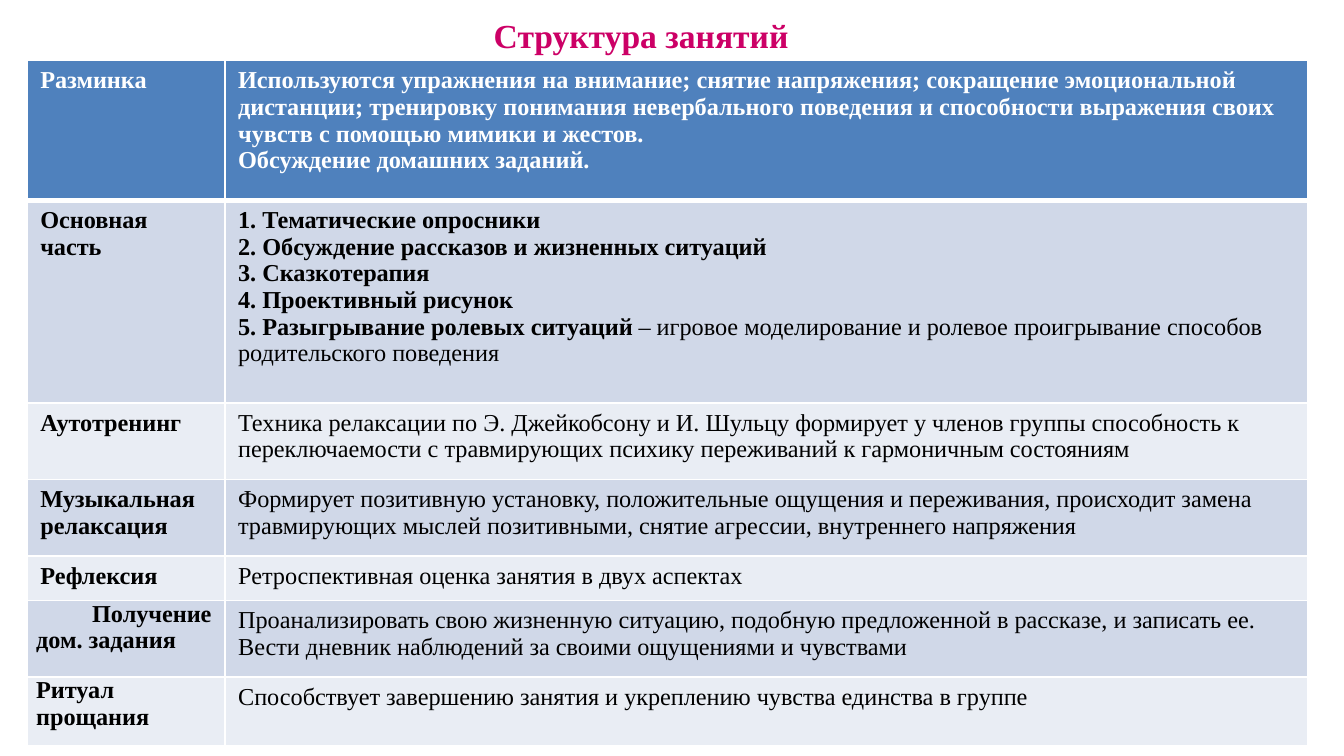
"""Build a slide with a table describing the structure of the sessions."""
import pptx
import pptx.dml.color
import pptx.enum.text
import pptx.oxml
import pptx.oxml.ns
import pptx.util

Pt = pptx.util.Pt
ALIGN = pptx.enum.text.PP_ALIGN
FONT = "Times New Roman"
COLORS = {
    "title": "CC0066", "header": "4F81BD", "odd": "D0D8E8",
    "even": "E9EDF4", "white": "FFFFFF", "text": "000000",
}
TITLE = "Структура занятий"
COLUMN_WIDTHS = (106, 580)
ROW_HEIGHTS = (75, 108.5, 41, 41, 24, 41, 36.5)
WIDE_MARGINS = (7.2, 3.6)
TIGHT_MARGINS = (5, 0)
JUSTIFIED_INDENTS = {"Получение дом. задания": 30, "Ритуал прощания": 0}
STAGES = [
    ("Разминка", [
        [("Используются упражнения на внимание; снятие напряжения; сокращение "
          "эмоциональной дистанции; тренировку понимания невербального поведения "
          "и способности выражения своих чувств с помощью мимики и жестов.", True)],
        [("Обсуждение домашних заданий.", True)],
    ]),
    ("Основная часть", [
        [("1. Тематические опросники", True)],
        [("2. Обсуждение рассказов и жизненных ситуаций", True)],
        [("3. Сказкотерапия", True)],
        [("4. Проективный рисунок", True)],
        [("5. Разыгрывание ролевых ситуаций ", True),
         ("– игровое моделирование и ролевое проигрывание способов "
          "родительского поведения", False)],
    ]),
    ("Аутотренинг", [
        [("Техника релаксации по Э. Джейкобсону и И. Шульцу формирует у членов "
          "группы способность к переключаемости с травмирующих психику "
          "переживаний к гармоничным состояниям", False)],
    ]),
    ("Музыкальная релаксация", [
        [("Формирует позитивную установку, положительные ощущения и переживания, "
          "происходит замена травмирующих мыслей позитивными, снятие агрессии, "
          "внутреннего напряжения", False)],
    ]),
    ("Рефлексия", [
        [("Ретроспективная оценка занятия в двух аспектах", False)],
    ]),
    ("Получение дом. задания", [
        [("Проанализировать свою жизненную ситуацию, подобную предложенной в "
          "рассказе, и записать ее. Вести дневник наблюдений за своими "
          "ощущениями и чувствами", False)],
    ]),
    ("Ритуал прощания", [
        [("Способствует завершению занятия и укреплению чувства единства "
          "в группе", False)],
    ]),
]


def rgb(name):
    return pptx.dml.color.RGBColor.from_string(COLORS[name])


def write_paragraphs(text_frame, paragraphs, size, color):
    for index, runs in enumerate(paragraphs):
        paragraph = text_frame.add_paragraph() if index else text_frame.paragraphs[0]
        for text, bold in runs:
            run = paragraph.add_run()
            run.text = text
            run.font.name = FONT
            run.font.size = Pt(size)
            run.font.bold = bold
            run.font.color.rgb = rgb(color)


def set_margins(frame, horizontal, vertical):
    frame.margin_left = frame.margin_right = Pt(horizontal)
    frame.margin_top = frame.margin_bottom = Pt(vertical)


def add_borders(cell, top, bottom):
    properties = cell._tc.get_or_add_tcPr()
    for side, width in (("L", 1), ("R", 1), ("T", top), ("B", bottom)):
        properties.append(pptx.oxml.parse_xml(
            f'<a:ln{side} {pptx.oxml.ns.nsdecls("a")} w="{Pt(width)}"><a:solidFill>'
            f'<a:srgbClr val="{COLORS["white"]}"/></a:solidFill></a:ln{side}>'))


def add_title(slide):
    box = slide.shapes.add_textbox(Pt(19.5), Pt(10), Pt(648), Pt(17.5))
    frame = box.text_frame
    frame.word_wrap = True
    frame.vertical_anchor = pptx.enum.text.MSO_ANCHOR.MIDDLE
    set_margins(frame, *WIDE_MARGINS)
    write_paragraphs(frame, [[(TITLE, True)]], 18, "title")
    frame.paragraphs[0].alignment = ALIGN.CENTER


def add_stage_table(slide):
    table = slide.shapes.add_table(
        len(STAGES), len(COLUMN_WIDTHS), Pt(14.4), Pt(32.4),
        Pt(sum(COLUMN_WIDTHS)), Pt(sum(ROW_HEIGHTS))).table
    for column, width in zip(table.columns, COLUMN_WIDTHS):
        column.width = Pt(width)
    for index, (name, description) in enumerate(STAGES):
        table.rows[index].height = Pt(ROW_HEIGHTS[index])
        fill = "header" if index == 0 else "odd" if index % 2 else "even"
        color = "text" if index else "white"
        for column, paragraphs in enumerate(([[(name, True)]], description)):
            cell = table.cell(index, column)
            add_borders(cell, 3 if index == 1 else 1, 1 if index else 3)
            cell.fill.solid()
            cell.fill.fore_color.rgb = rgb(fill)
            set_margins(cell, *WIDE_MARGINS)
            write_paragraphs(cell.text_frame, paragraphs, 13, color)
        if name in JUSTIFIED_INDENTS:
            cell = table.cell(index, 0)
            set_margins(cell, *TIGHT_MARGINS)
            paragraph = cell.text_frame.paragraphs[0]
            paragraph.alignment = ALIGN.JUSTIFY
            paragraph._p.get_or_add_pPr().set("indent", str(Pt(JUSTIFIED_INDENTS[name])))


def main():
    presentation = pptx.Presentation()
    presentation.slide_width = Pt(720)
    presentation.slide_height = Pt(405)
    slide = presentation.slides.add_slide(presentation.slide_layouts[6])
    add_title(slide)
    add_stage_table(slide)
    presentation.save("out.pptx")


if __name__ == "__main__":
    main()
